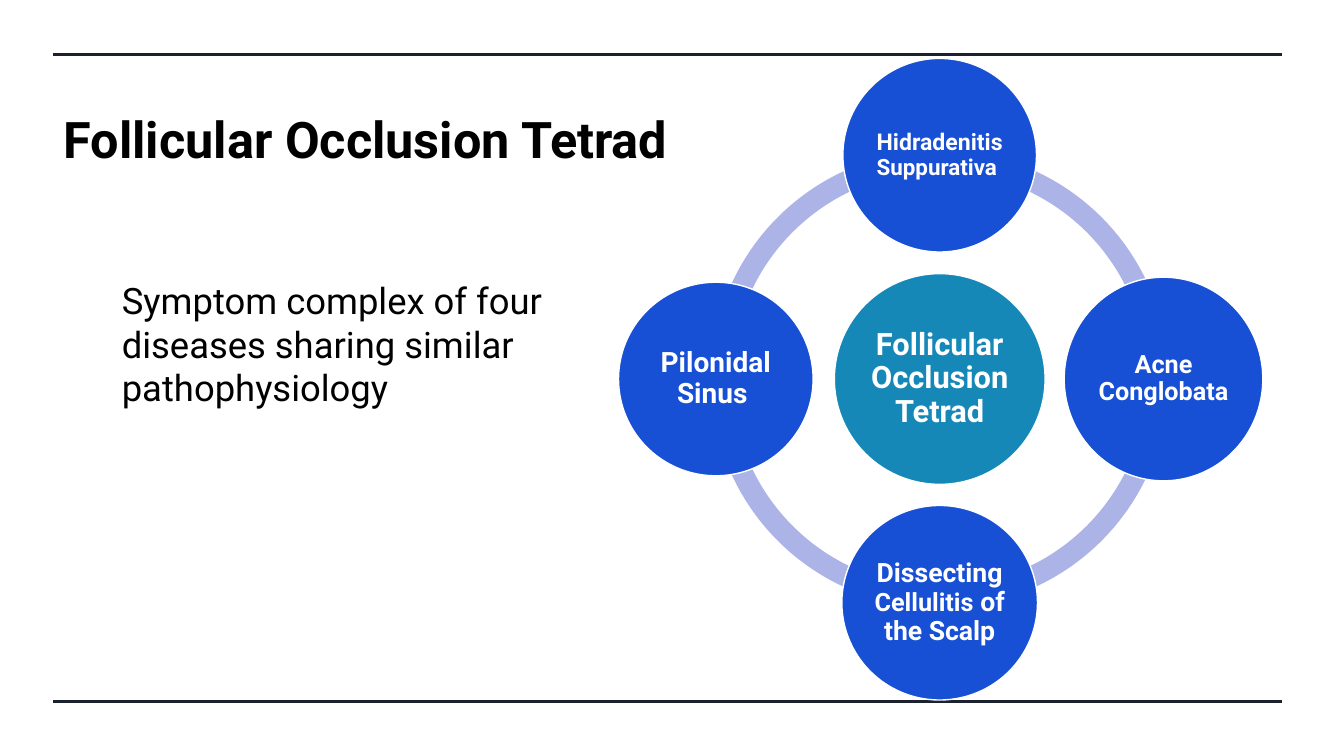
import math
import pptx
import pptx.util
import pptx.dml.color
import pptx.enum.shapes
import pptx.enum.text
import lxml.etree

WIDE, HIGH = 13.33, 7.5
FONT = "Roboto"
NAVY, BLACK, WHITE = "1B212F", "000000", "FFFFFF"
BLUE, TEAL, LILAC = "174FD5", "1588B7", "ACB3E7"
LEFT = 0.53
MID_X, MID_Y = 9.32, 3.76
ORBIT = 2.22
RING = 4.54
QUARTER = 54  # a quarter turn in adjustment units

KINDS = pptx.enum.shapes.MSO_SHAPE
ALIGN = pptx.enum.text.PP_ALIGN
ANCHOR = pptx.enum.text.MSO_ANCHOR
inch = pptx.util.Inches

# Clockwise from the top: width, height, runs of (text, size)
NODES = [
    (1.92, 1.92, [("Hidradenitis ", 16.5), ("Suppurativa", 16), (" ", 16.5)]),
    (1.97, 2.02, [("Acne Conglobata", 18)]),
    (1.94, 1.93, [("Dissecting ", 19), ("Cellulitis", 18), (" of the Scalp", 19)]),
    (1.93, 1.92, [("Pilonidal Sinus ", 20)]),
]


def color(code):
    return pptx.dml.color.RGBColor.from_string(code)


def paint(shape, fill):
    shape.shadow.inherit = False
    shape.fill.solid()
    shape.fill.fore_color.rgb = color(fill)


def style(font, size, code, bold=False):
    font.name = FONT
    font.size = pptx.util.Pt(size)
    font.bold = bold
    font.color.rgb = color(code)


def add_rule(slide, y):
    line = slide.shapes.add_connector(
        pptx.enum.shapes.MSO_CONNECTOR.STRAIGHT,
        inch(LEFT), inch(y), inch(12.72), inch(y))
    line.line.color.rgb = color(NAVY)
    line.line.width = pptx.util.Pt(2.25)
    lxml.etree.SubElement(line._element.spPr, pptx.oxml.ns.qn("a:effectLst"))


def set_title(slide, text):
    title = slide.shapes.title
    title.left, title.top = inch(LEFT), inch(1.07)
    title.width, title.height = inch(6.92), inch(0.6)
    frame = title.text_frame
    frame.text = text
    frame.auto_size = pptx.enum.text.MSO_AUTO_SIZE.NONE
    frame.vertical_anchor = ANCHOR.MIDDLE
    line = frame.paragraphs[0]
    line.alignment = ALIGN.LEFT
    style(line.font, 36, BLACK, True)


def add_body(slide, text):
    box = slide.shapes.add_textbox(inch(1.11), inch(2.75), inch(4.45), inch(2))
    frame = box.text_frame
    frame.word_wrap = True
    frame.margin_top = inch(0.01)
    frame.text = text
    line = frame.paragraphs[0]
    line.space_before = pptx.util.Pt(10)
    style(line.font, 26, BLACK)


def add_round(slide, kind, x, y, wide, high, fill):
    """Add a filled shape centred on x, y."""
    shape = slide.shapes.add_shape(
        kind, inch(x - wide / 2), inch(y - high / 2), inch(wide), inch(high))
    paint(shape, fill)
    return shape


def add_arc(slide, turn):
    arc = add_round(slide, KINDS.BLOCK_ARC, MID_X, MID_Y, RING, RING, LILAC)
    arc.line.fill.background()
    start, end = turn * QUARTER, (turn + 1) % 4 * QUARTER
    for i, value in enumerate((start, end, 0.046)):
        arc.adjustments[i] = value


def add_node(slide, x, y, wide, high, fill, runs):
    node = add_round(slide, KINDS.OVAL, x, y, wide, high, fill)
    node.line.color.rgb = color(WHITE)
    node.line.width = pptx.util.Pt(1)
    frame = node.text_frame
    frame.word_wrap = True
    frame.vertical_anchor = ANCHOR.MIDDLE
    frame.margin_left = frame.margin_right = inch(0.03)
    frame.margin_top = frame.margin_bottom = inch(0.03)
    line = frame.paragraphs[0]
    line.alignment = ALIGN.CENTER
    line.line_spacing = 0.9
    style(line.font, runs[0][1], WHITE, True)
    for text, size in runs:
        run = line.add_run()
        run.text = text
        style(run.font, size, WHITE, True)


def main():
    deck = pptx.Presentation()
    deck.slide_width, deck.slide_height = inch(WIDE), inch(HIGH)
    slide = deck.slides.add_slide(deck.slide_layouts.get_by_name("Title Only"))
    for y in (0.54, HIGH - 0.54):
        add_rule(slide, y)
    set_title(slide, "Follicular Occlusion Tetrad")
    add_body(slide, "Symptom complex of four diseases sharing similar pathophysiology")
    for turn in range(4):
        add_arc(slide, turn)
    add_node(slide, MID_X, MID_Y, 2.09, 2.09, TEAL,
             [("Follicular Occlusion Tetrad", 22)])
    for i, (wide, high, runs) in enumerate(NODES):
        angle = i * math.pi / 2
        x = MID_X + ORBIT * math.sin(angle)
        y = MID_Y - ORBIT * math.cos(angle)
        add_node(slide, x, y, wide, high, BLUE, runs)
    deck.save("out.pptx")


if __name__ == "__main__":
    main()
